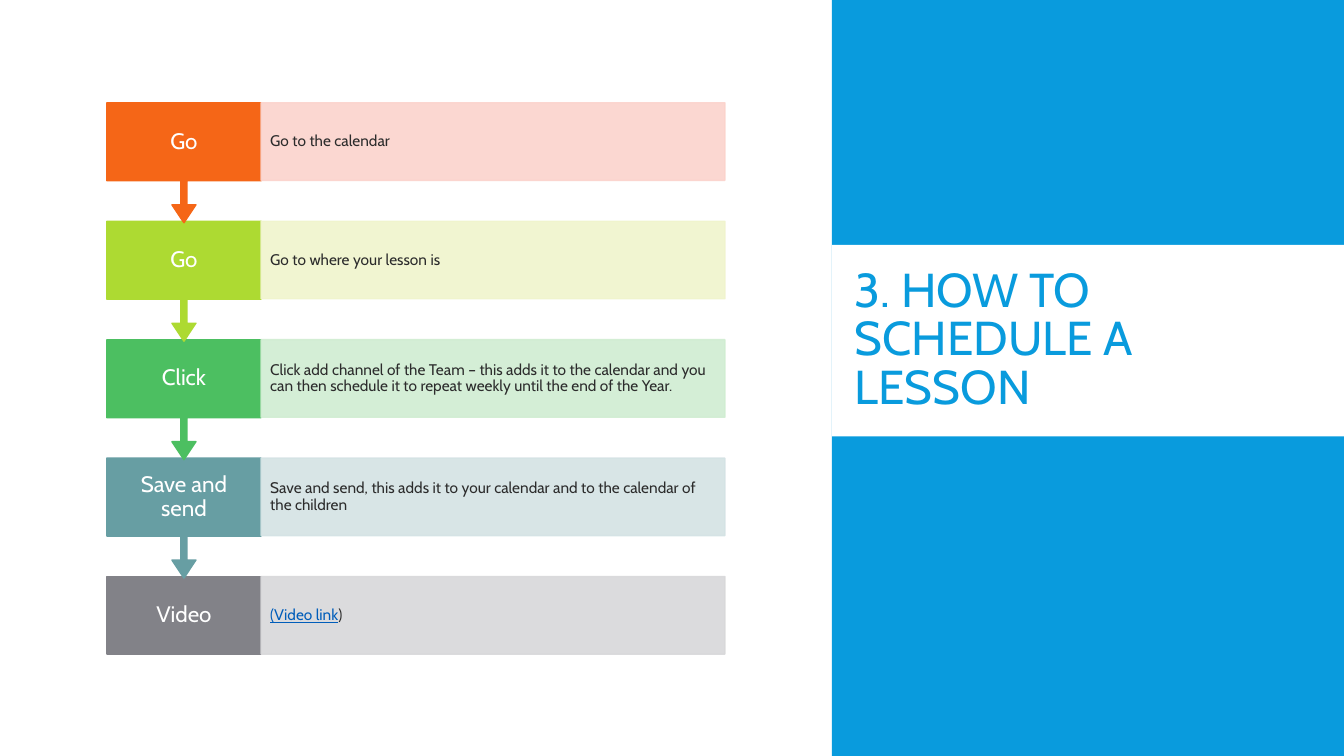
import pptx
import pptx.dml.color
import pptx.enum.shapes
import pptx.enum.text
import pptx.oxml
import pptx.oxml.ns
import pptx.util

Inches = pptx.util.Inches
SHAPE = pptx.enum.shapes.MSO_SHAPE
ALIGN = pptx.enum.text.PP_ALIGN

TITLE = "3. HOW TO SCHEDULE A LESSON"
# label, description spans as (text, is link), label colour, panel colour
STEPS = [
    ("Go", [("Go to the calendar", False)], "F56617", "FBD3CC"),
    ("Go", [("Go to where your lesson is", False)], "ADDA32", "F0F4CD"),
    ("Click", [("Click add channel of the Team – this adds it to the calendar and you "
                "can then schedule it to repeat weekly until the end of the Year.", False)],
     "4CBF61", "D0EDD2"),
    ("Save and send", [("Save and send, this adds it to your calendar and to the "
                        "calendar of the children", False)], "679EA3", "D4E3E4"),
    ("Video", [("(Video link", True), (")", False)], "828288", "D8D8DA"),
]
THEME = {
    "font": "Cabin", "accent": "099BDD", "white": "FFFFFF", "ink": "2C2C2C",
    "link": "005DBA", "title_size": 34, "label_size": 16, "body_size": 11,
    "panel_opacity": 90,
}

PAGE_WIDTH, PAGE_HEIGHT = 13.33, 7.5
SIDEBAR_LEFT = 8.25
LABEL_LEFT, LABEL_WIDTH, PANEL_WIDTH = 1.06, 1.53, 4.6
FIRST_TOP, STEP_PITCH = 1.02, 1.175
BOX_HEIGHT, CALLOUT_HEIGHT = 0.77, 1.19
CALLOUT_ADJUSTMENTS = (0.05, 0.1, 0.15, 0.65)


def color(value):
    return pptx.dml.color.RGBColor.from_string(value)


def add_block(page, kind, box, fill, outlined=False):
    shape = page.shapes.add_shape(kind, *map(Inches, box))
    shape.shadow.inherit = False
    shape.fill.solid()
    shape.fill.fore_color.rgb = color(fill)
    if outlined:
        shape.line.color.rgb = color(fill)
        shape.line.width = pptx.util.Pt(1)
    else:
        shape.line.fill.background()
    return shape


def set_opacity(shape, percent):
    """Make the fill and the outline of a shape partly transparent."""
    for tone in shape.element.spPr.iter(pptx.oxml.ns.qn("a:srgbClr")):
        alpha = pptx.oxml.parse_xml(
            f'<a:alpha {pptx.oxml.ns.nsdecls("a")} val="{percent * 1000}"/>')
        tone.append(alpha)


def write(shape, spans, size, align, spacing, insets):
    """Fill a shape with one paragraph of (text, colour, underlined) spans."""
    frame = shape.text_frame
    frame.word_wrap = True
    frame.vertical_anchor = pptx.enum.text.MSO_ANCHOR.MIDDLE
    frame.margin_left = frame.margin_right = Inches(insets[0])
    frame.margin_top = frame.margin_bottom = Inches(insets[1])
    para = frame.paragraphs[0]
    para.alignment = align
    para.line_spacing = spacing
    for text, tone, underlined in spans:
        span = para.add_run()
        span.text = text
        span.font.name = THEME["font"]
        span.font.size = pptx.util.Pt(size)
        span.font.color.rgb = color(tone)
        span.font.underline = underlined


def add_sidebar(page):
    width = PAGE_WIDTH - SIDEBAR_LEFT
    add_block(page, SHAPE.RECTANGLE, (SIDEBAR_LEFT, 0, width, PAGE_HEIGHT), THEME["accent"])
    add_block(page, SHAPE.RECTANGLE, (SIDEBAR_LEFT, 2.43, width, 1.9), THEME["white"])
    title = page.shapes.add_textbox(*map(Inches, (8.38, 2.56, 4.52, 1.65)))
    write(title, [(TITLE, THEME["accent"], False)], THEME["title_size"],
          ALIGN.LEFT, 0.85, (0.1, 0.05))


def add_step(page, index):
    label, description, label_fill, panel_fill = STEPS[index]
    top = FIRST_TOP + index * STEP_PITCH
    is_last = index == len(STEPS) - 1
    kind = SHAPE.RECTANGLE if is_last else SHAPE.DOWN_ARROW_CALLOUT
    height = BOX_HEIGHT if is_last else CALLOUT_HEIGHT

    block = add_block(page, kind, (LABEL_LEFT, top, LABEL_WIDTH, height), label_fill, True)
    if not is_last:
        for position, value in enumerate(CALLOUT_ADJUSTMENTS):
            block.adjustments[position] = value
    write(block, [(label, THEME["white"], False)], THEME["label_size"],
          ALIGN.CENTER, 0.9, (0.11, 0.12))

    panel = add_block(page, SHAPE.RECTANGLE,
                      (LABEL_LEFT + LABEL_WIDTH, top, PANEL_WIDTH, BOX_HEIGHT),
                      panel_fill, True)
    set_opacity(panel, THEME["panel_opacity"])
    spans = [(text, THEME["link" if is_link else "ink"], is_link)
             for text, is_link in description]
    write(panel, spans, THEME["body_size"], ALIGN.LEFT, 0.9, (0.09, 0.15))


def main():
    deck = pptx.Presentation()
    deck.slide_width, deck.slide_height = Inches(PAGE_WIDTH), Inches(PAGE_HEIGHT)
    page = deck.slides.add_slide(deck.slide_layouts[6])
    add_sidebar(page)
    # Bottom step first, so that each arrow tip lies over the box below it
    for index in reversed(range(len(STEPS))):
        add_step(page, index)
    deck.save("out.pptx")


if __name__ == "__main__":
    main()
